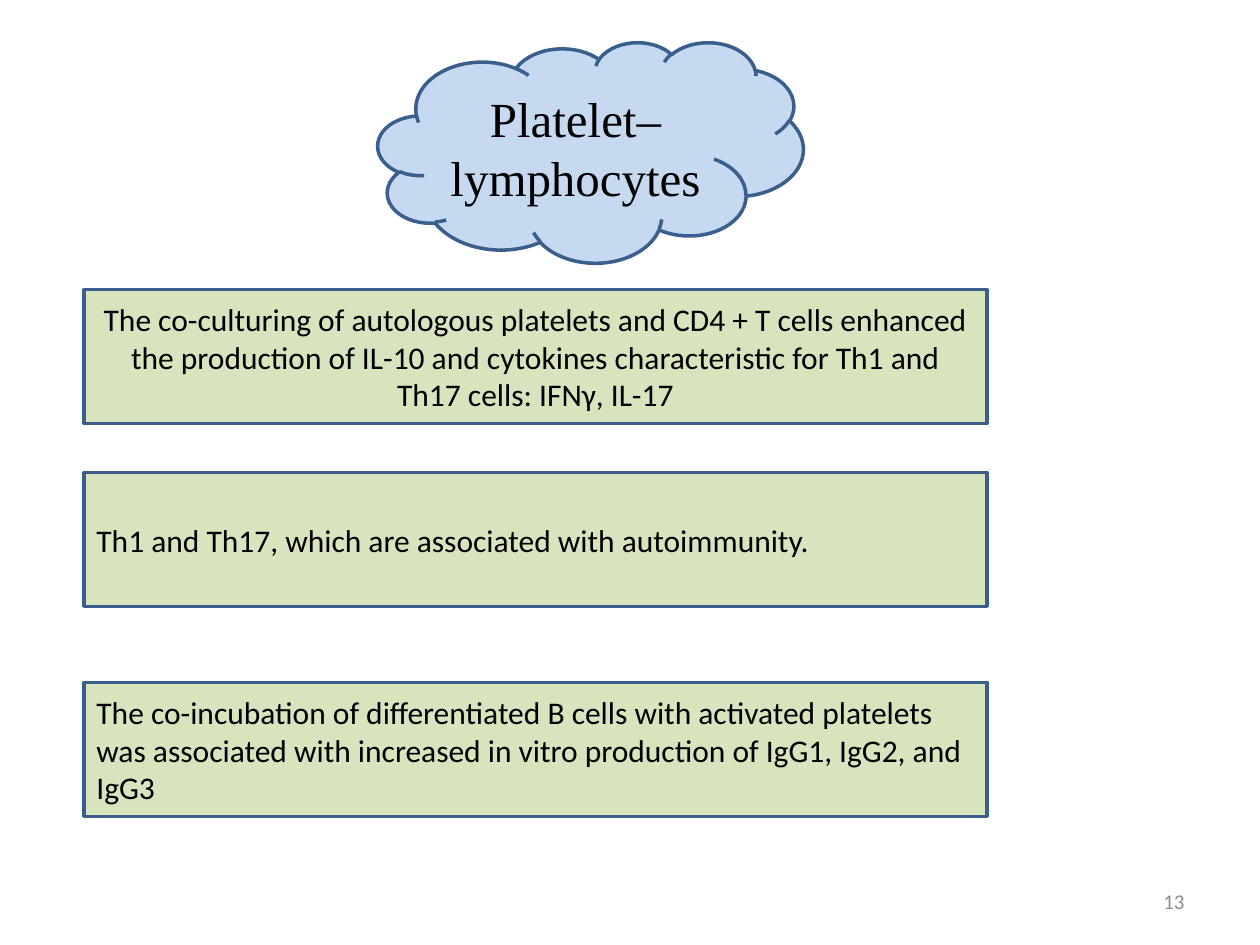
"""Build the slide on how platelets act on lymphocytes."""
from dataclasses import dataclass
from typing import Any

from pptx import Presentation
from pptx.dml.color import RGBColor
from pptx.enum import shapes, text
from pptx.util import Pt

LEFT, CENTER, RIGHT = text.PP_ALIGN.LEFT, text.PP_ALIGN.CENTER, text.PP_ALIGN.RIGHT


def color(code):
    """Turn a hex string into a colour."""
    return RGBColor.from_string(code)


@dataclass
class SlideBuilder:
    """Hold the style and the current slide."""

    slide: Any
    topic_font: str = "Times New Roman"
    body_font: str = "Calibri"
    ink: str = "000000"
    muted: str = "8C8C8C"
    outline: str = "3A5F8C"
    topic_fill: str = "C6D9F1"
    finding_fill: str = "D7E4BD"

    def set_words(self, holder, words, font, size, ink, align):
        """Put one vertically centred paragraph into a shape."""
        frame = holder.text_frame
        frame.word_wrap = True
        frame.vertical_anchor = text.MSO_ANCHOR.MIDDLE
        paragraph = frame.paragraphs[0]
        paragraph.text = words
        paragraph.alignment = align
        paragraph.font.name = font
        paragraph.font.size = Pt(size)
        paragraph.font.color.rgb = color(ink)

    def panel(self, preset, box, fill):
        """Add an outlined preset shape."""
        panel = self.slide.shapes.add_shape(preset, *map(Pt, box))
        panel.shadow.inherit = False
        panel.fill.solid()
        panel.fill.fore_color.rgb = color(fill)
        panel.line.color.rgb = color(self.outline)
        panel.line.width = Pt(2)
        return panel

    def topic(self, words, box):
        """Add the cloud that names the topic."""
        cloud = self.panel(shapes.MSO_SHAPE.CLOUD, box, self.topic_fill)
        self.set_words(cloud, words, self.topic_font, 28, self.ink, CENTER)

    def finding(self, words, top, align):
        """Add one finding in a box of the shared width."""
        box = (48, top, 516, 76.5)
        panel = self.panel(shapes.MSO_SHAPE.RECTANGLE, box, self.finding_fill)
        self.set_words(panel, words, self.body_font, 18, self.ink, align)

    def page_number(self, number, box):
        """Add the page number."""
        label = self.slide.shapes.add_textbox(*map(Pt, box))
        self.set_words(label, number, self.body_font, 12, self.muted, RIGHT)


def main():
    """Build and save the slide."""
    deck = Presentation()
    deck.slide_width, deck.slide_height = Pt(720), Pt(540)
    builder = SlideBuilder(deck.slides.add_slide(deck.slide_layouts[6]))

    builder.topic("Platelet–lymphocytes", (216, 24, 243, 126))
    findings = [
        ("The co-culturing of autologous platelets and CD4 + T cells enhanced "
         "the production of IL-10 and cytokines characteristic for Th1 and "
         "Th17 cells: IFNγ, IL-17", 165.5, CENTER),
        ("Th1 and Th17, which are associated with autoimmunity.", 270, LEFT),
        ("The co-incubation of differentiated B cells with activated platelets "
         "was associated with increased in vitro production of IgG1, IgG2, "
         "and IgG3", 390, LEFT),
    ]
    for words, top, align in findings:
        builder.finding(words, top, align)
    builder.page_number("13", (516, 500.5, 168, 28.75))

    deck.save("out.pptx")


if __name__ == "__main__":
    main()
